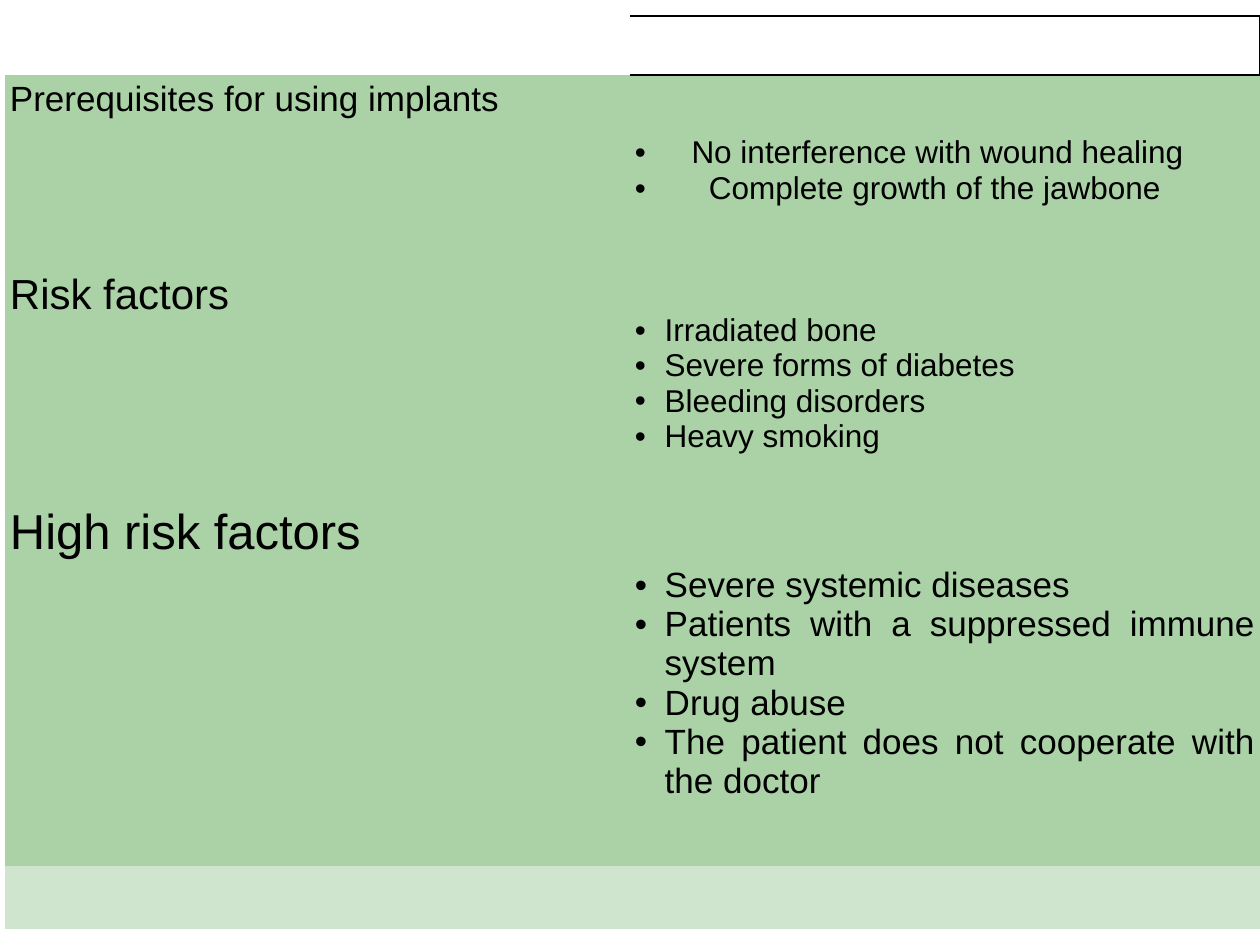
from dataclasses import dataclass

from lxml.etree import SubElement
from pptx import Presentation
from pptx.dml.color import RGBColor
from pptx.enum.text import MSO_ANCHOR as Anchor, PP_ALIGN as Align
from pptx.oxml import parse_xml
from pptx.oxml.ns import nsdecls, qn
from pptx.table import _Cell as Cell
from pptx.util import Cm, Length, Pt

BLACK = RGBColor(0x00, 0x00, 0x00)
GREEN = RGBColor(0xAA, 0xD2, 0xA6)
PALE_GREEN = RGBColor(0xD0, 0xE5, 0xCD)

COLS = (Cm(12.6), Cm(12.7))
ROWS = (Cm(1.19), Cm(3.86), Cm(4.72), Cm(7.37), Cm(1.27))
MARGINS = {f"margin_{side}": Cm(0.1) for side in ("left", "right", "top", "bottom")}
TABLE_FLAGS = {"first_row": False, "horz_banding": False}
FONT = {"name": "Arial", "bold": False}
HANG = Cm(0.6)


@dataclass(frozen=True)
class Item:
    text: str
    indent: Length = HANG


@dataclass(frozen=True)
class Section:
    title: str
    title_size: int
    item_size: int
    items: tuple[Item, ...]


SECTIONS = (
    Section("Prerequisites for using implants", 20, 18, (
        Item("No interference with wound healing", Cm(1.14)),
        Item("Complete growth of the jawbone", Cm(1.49)),
    )),
    Section("Risk factors", 24, 18, (
        Item("Irradiated bone"),
        Item("Severe forms of diabetes"),
        Item("Bleeding disorders"),
        Item("Heavy smoking"),
    )),
    Section("High risk factors", 28, 20, (
        Item("Severe systemic diseases"),
        Item("Patients with a suppressed immune system"),
        Item("Drug abuse"),
        Item("The patient does not cooperate with the doctor"),
    )),
)


def set_attrs(obj: object, values: dict) -> None:
    for name, value in values.items():
        setattr(obj, name, value)


def set_borders(cell: Cell, visible: str = "") -> None:
    tc_pr = cell._tc.get_or_add_tcPr()
    for i, side in enumerate("LRTB"):
        fill = (f'<a:solidFill><a:srgbClr val="{BLACK}"/></a:solidFill>'
                if side in visible else "<a:noFill/>")
        tc_pr.insert(i, parse_xml(
            f'<a:ln{side} {nsdecls("a")} w="{Pt(1)}">{fill}</a:ln{side}>'))


def add_bullet(p, indent: Length) -> None:
    p_pr = p._p.get_or_add_pPr()
    p_pr.set("marL", str(indent))
    p_pr.set("indent", str(-indent))
    SubElement(p_pr, qn("a:buFont"), typeface="Arial")
    SubElement(p_pr, qn("a:buChar"), char="•")


def write(cell: Cell, items: tuple[Item, ...], size: int, bulleted: bool) -> None:
    tf = cell.text_frame
    for i, item in enumerate(items):
        p = tf.add_paragraph() if i else tf.paragraphs[0]
        p.alignment = Align.JUSTIFY
        if bulleted:
            add_bullet(p, item.indent)
        r = p.add_run()
        r.text = item.text
        set_attrs(r.font, FONT | {"size": Pt(size)})
        r.font.color.rgb = BLACK


def fill_section(cells: tuple[Cell, Cell], section: Section) -> None:
    title, body = cells
    write(title, (Item(section.title),), section.title_size, False)
    write(body, section.items, section.item_size, True)
    body.vertical_anchor = Anchor.MIDDLE


def main() -> None:
    prs = Presentation()
    prs.slide_width, prs.slide_height = Cm(25.4), Cm(19.05)
    s = prs.slides.add_slide(prs.slide_layouts[6])
    table = s.shapes.add_table(len(ROWS), len(COLS), Cm(0.1), Cm(0.32),
                               sum(COLS), sum(ROWS)).table
    set_attrs(table, TABLE_FLAGS)
    for col, width in zip(table.columns, COLS):
        col.width = width
    for row, height in zip(table.rows, ROWS):
        row.height = height

    last = len(ROWS) - 1
    borders = {(0, 1): "RTB", (1, 1): "T"}
    for y in range(len(ROWS)):
        for x in range(len(COLS)):
            cell = table.cell(y, x)
            set_attrs(cell, MARGINS)
            if y == 0:
                cell.fill.background()
            else:
                cell.fill.solid()
                cell.fill.fore_color.rgb = PALE_GREEN if y == last else GREEN
            set_borders(cell, borders.get((y, x), ""))
    table.cell(last, 0).merge(table.cell(last, 1))

    for y, section in enumerate(SECTIONS, 1):
        fill_section((table.cell(y, 0), table.cell(y, 1)), section)
    prs.save("out.pptx")


if __name__ == "__main__":
    main()
